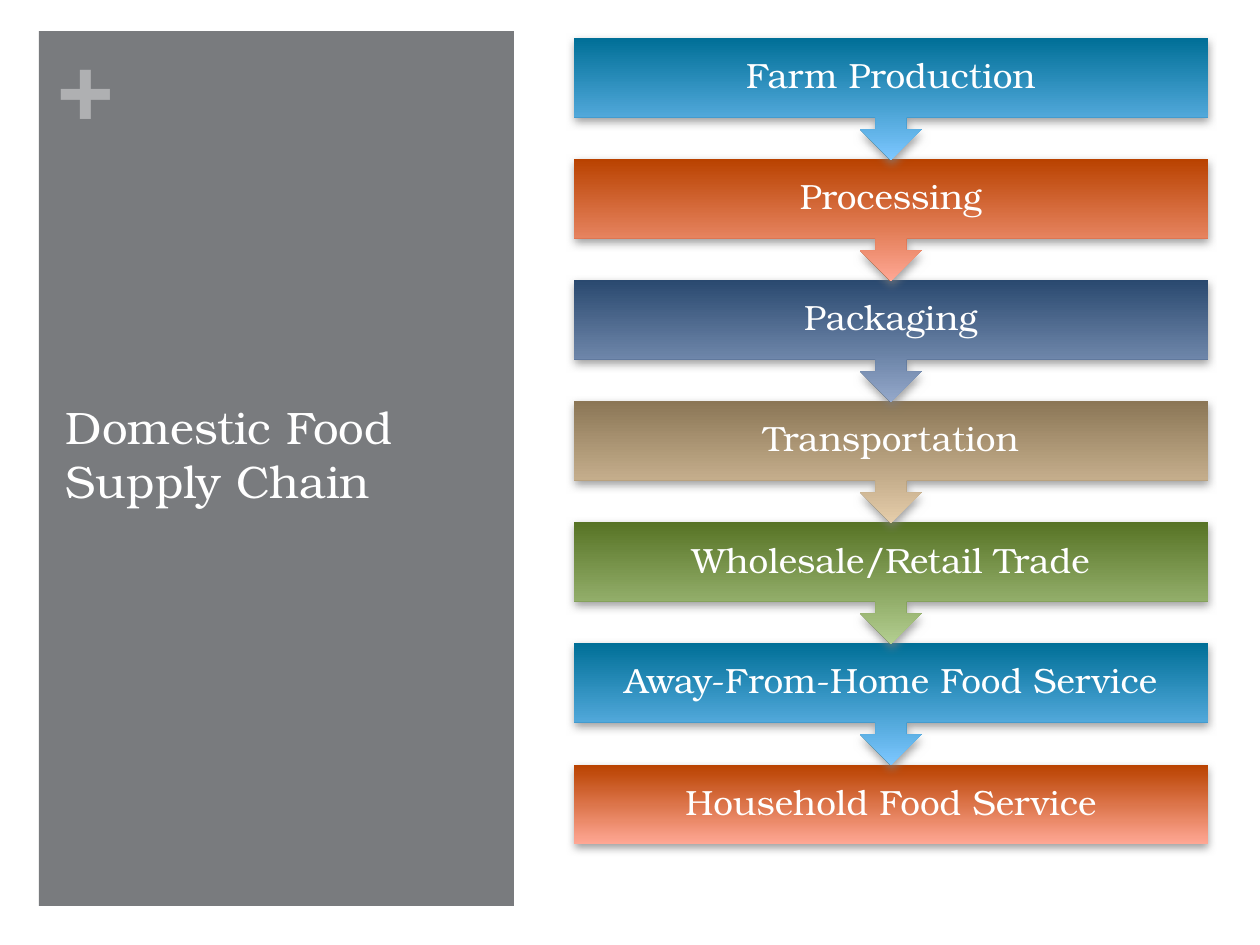
import pptx
import pptx.dml.color
import pptx.enum.shapes
import pptx.enum.text
import pptx.util
from lxml import etree

SHAPE = pptx.enum.shapes.MSO_SHAPE
ALIGN = pptx.enum.text.PP_ALIGN
ANCHOR = pptx.enum.text.MSO_ANCHOR
SCALE = 914400 // 126
FONT = "TeX Gyre Bonum"
BLUE = ("006F97", "7DC7FF")
RED = ("B94200", "FFA794")
NAVY = ("2A496F", "94A8CA")
TAN = ("8B7656", "E5CDAA")
GREEN = ("577325", "B3CE90")
SHADOW = """<a:outerShdw xmlns:a="http://schemas.openxmlformats.org/drawingml/2006/main"
 blurRad="63500" dist="25400" dir="5400000" rotWithShape="0">
 <a:srgbClr val="808080"><a:alpha val="75000"/></a:srgbClr></a:outerShdw>"""


def color(code):
    return pptx.dml.color.RGBColor.from_string(code)


def px(*sizes):
    return [size * SCALE for size in sizes]


class Deck:
    def __init__(self, font):
        self.font = font
        self.file = pptx.Presentation()
        self.file.slide_width, self.file.slide_height = px(1260, 945)
        self.slide = self.file.slides.add_slide(self.file.slide_layouts[6])

    def words(self, shape, text, size, ink, align, anchor, inset, bold=False, wrap=True):
        frame = shape.text_frame
        frame.word_wrap = wrap
        frame.vertical_anchor = anchor
        frame.margin_left, frame.margin_top, frame.margin_right, frame.margin_bottom = px(*inset)
        line = frame.paragraphs[0]
        line.text = text
        line.alignment = align
        line.font.name = self.font
        line.font.size = pptx.util.Pt(size)
        line.font.bold = bold
        line.font.color.rgb = color(ink)
        return line

    def label(self, box, text, size, ink, anchor, inset, bold=False, wrap=True):
        shape = self.slide.shapes.add_textbox(*px(*box))
        self.words(shape, text, size, ink, ALIGN.LEFT, anchor, inset, bold, wrap)

    def block(self, kind, box):
        shape = self.slide.shapes.add_shape(kind, *px(*box))
        shape.shadow.inherit = False
        shape.line.fill.background()
        return shape

    def panel(self, box, fill):
        shape = self.block(SHAPE.RECTANGLE, box)
        shape.fill.solid()
        shape.fill.fore_color.rgb = color(fill)

    def step(self, kind, box, text, fade):
        shape = self.block(kind, box)
        shape.fill.gradient()
        shape.fill.gradient_angle = 270
        for stop, code in zip(shape.fill.gradient_stops, fade):
            stop.color.rgb = color(code)
        shape.element.spPr.find("{*}effectLst").append(etree.fromstring(SHADOW))
        line = self.words(shape, text, 20, "FFFFFF", ALIGN.CENTER, ANCHOR.MIDDLE, [20] * 4)
        line.line_spacing = 0.9


def main():
    deck = Deck(FONT)
    deck.panel((39, 31, 475, 875), "797B7E")
    deck.label((58, 24, 57, 115), "+", 54, "AFB0B2", ANCHOR.TOP, [0] * 4, bold=True, wrap=False)
    deck.label((53, 354, 449, 160), "Domestic Food Supply Chain", 26, "FFFFFF",
               ANCHOR.BOTTOM, (13, 6, 13, 6))

    steps = [
        ("Farm Production", BLUE),
        ("Processing", RED),
        ("Packaging", NAVY),
        ("Transportation", TAN),
        ("Wholesale/Retail Trade", GREEN),
        ("Away-From-Home Food Service", BLUE),
        ("Household Food Service", RED),
    ]
    last = len(steps) - 1
    for rank in range(last, -1, -1):
        kind, tall = (SHAPE.RECTANGLE, 79) if rank == last else (SHAPE.DOWN_ARROW_CALLOUT, 122)
        top = 38 + 727 * rank // last
        deck.step(kind, (574, top, 634, tall), *steps[rank])

    deck.file.save("out.pptx")


if __name__ == "__main__":
    main()
